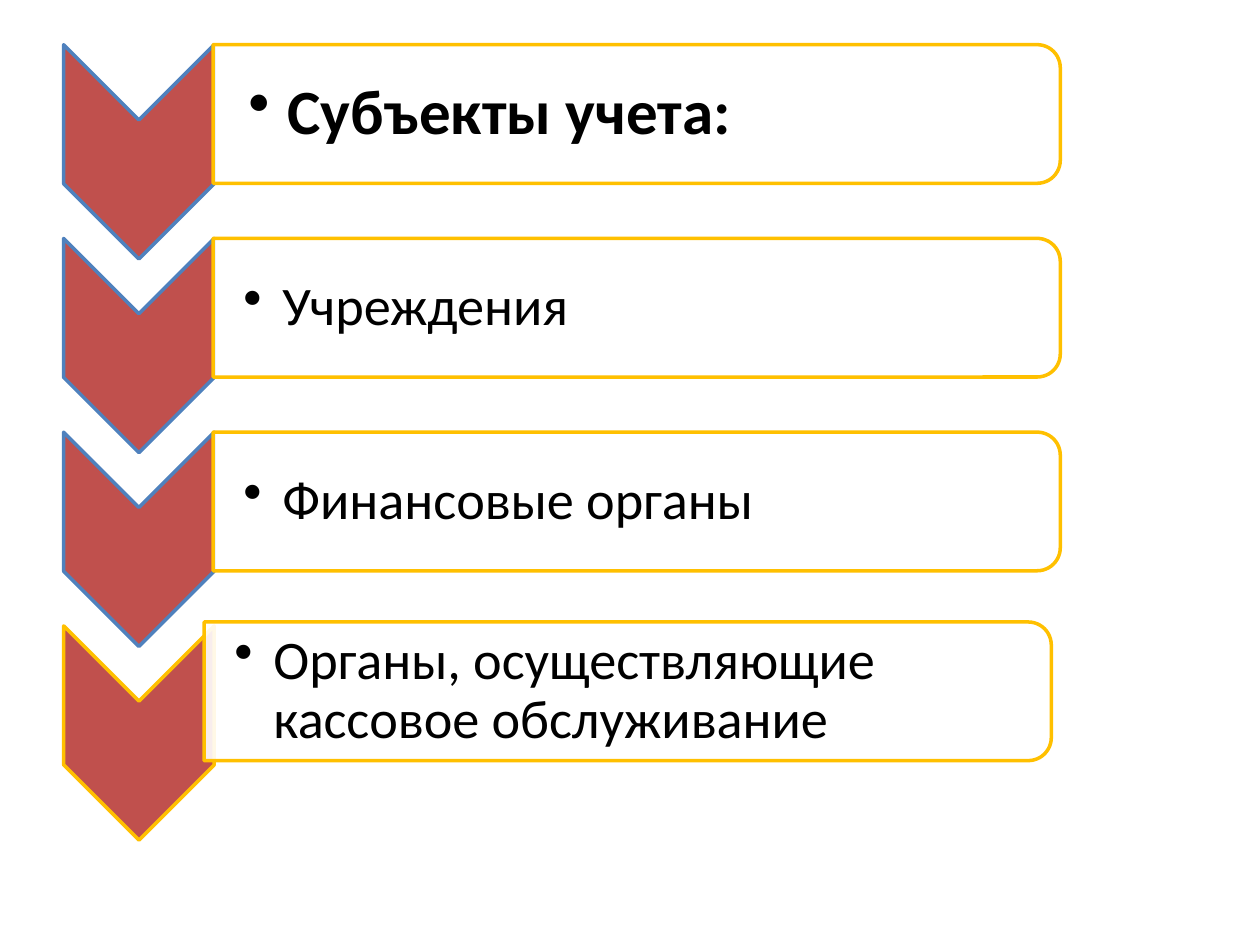
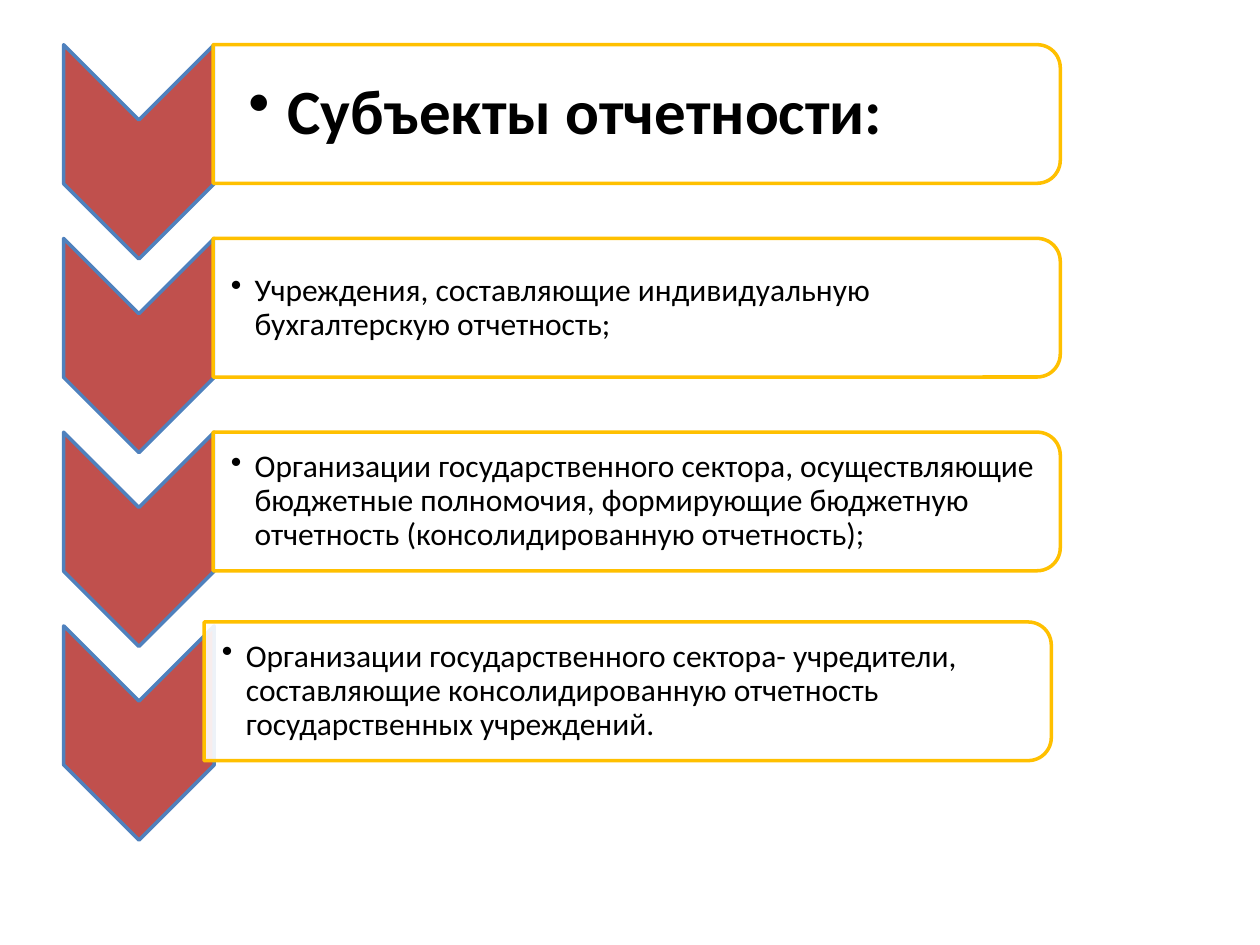
from dataclasses import dataclass

from lxml.etree import SubElement
from pptx import Presentation
from pptx.dml.color import RGBColor
from pptx.enum.shapes import MSO_SHAPE
from pptx.enum.text import MSO_ANCHOR
from pptx.oxml.ns import qn
from pptx.util import Inches, Pt


@dataclass(frozen=True)
class Style:
    size: int
    inset: float
    edge: float
    hang: float
    bold: bool = False


@dataclass(frozen=True)
class Theme:
    font: str = "Calibri"
    ink: str = "000000"
    paper: str = "FFFFFF"
    red: str = "C0504D"
    blue: str = "4F81BD"
    gold: str = "FFC000"
    line: float = 2
    cover: int = 90
    head: Style = Style(36, 0.28, 0.03, 0.31, True)
    large: Style = Style(31, 0.24, 0.02, 0.31)
    small: Style = Style(18, 0.14, 0.01, 0.19)


@dataclass(frozen=True)
class Box:
    left: float
    top: float
    width: float
    height: float

    def share(self, left, top, width, height):
        return Box(
            self.left + self.width * left / 100,
            self.top + self.height * top / 100,
            self.width * width / 100,
            self.height * height / 100,
        )

    def turned(self):
        shift = (self.width - self.height) / 2
        return Box(self.left + shift, self.top - shift, self.height, self.width)

    def inches(self):
        return [Inches(side) for side in (self.left, self.top, self.width, self.height)]


THEME = Theme()
PAGE = Box(0, 0, 10, 7.5)
ROWS = 4

SLIDES = [
    (
        THEME.large,
        THEME.gold,
        [
            "Субъекты учета:",
            "Учреждения",
            "Финансовые органы",
            "Органы, осуществляющие кассовое обслуживание",
        ],
    ),
    (
        THEME.small,
        THEME.blue,
        [
            "Субъекты отчетности:",
            "Учреждения, составляющие индивидуальную бухгалтерскую отчетность;",
            "Организации государственного сектора, осуществляющие бюджетные полномочия, "
            "формирующие бюджетную отчетность (консолидированную отчетность);",
            "Организации государственного сектора- учредители, составляющие "
            "консолидированную отчетность государственных учреждений.",
        ],
    ),
]


def add_turned(shapes, kind, box, fill, line):
    shape = shapes.add_shape(kind, *box.turned().inches())
    shape.rotation = 90
    shape.shadow.inherit = False
    shape.fill.solid()
    shape.fill.fore_color.rgb = RGBColor.from_string(fill)
    shape.line.color.rgb = RGBColor.from_string(line)
    shape.line.width = Pt(THEME.line)
    return shape


def add_card(shapes, box):
    card = add_turned(
        shapes, MSO_SHAPE.ROUND_2_SAME_RECTANGLE, box, THEME.paper, THEME.gold
    )
    tint = card.element.spPr.find(qn("a:solidFill"))[0]
    SubElement(tint, qn("a:alpha"), val=str(THEME.cover * 1000))


def add_point(shapes, box, text, style):
    frame = shapes.add_textbox(*box.inches()).text_frame
    frame.word_wrap = True
    frame.vertical_anchor = MSO_ANCHOR.MIDDLE
    frame.margin_left = Inches(style.inset)
    frame.margin_top = frame.margin_right = frame.margin_bottom = Inches(style.edge)
    point = frame.paragraphs[0]
    point.level = 1
    point.line_spacing = 0.9
    props = point._p.get_or_add_pPr()
    props.set("marL", str(Inches(style.hang)))
    props.set("indent", str(-Inches(style.hang)))
    after = SubElement(props, qn("a:spcAft"))
    SubElement(after, qn("a:spcPct"), val="15000")
    SubElement(props, qn("a:buChar"), char="•")
    run = point.add_run()
    run.text = text
    run.font.name = THEME.font
    run.font.size = Pt(style.size)
    run.font.bold = style.bold
    run.font.color.rgb = RGBColor.from_string(THEME.ink)


def add_row(shapes, box, text, style, line, shift):
    arrow = box.share(0, 0, 15.1, 110.6)
    card = box.share(15 + shift[0], shift[1], 85, 71.6)
    add_turned(shapes, MSO_SHAPE.CHEVRON, arrow, THEME.red, line)
    add_card(shapes, card)
    add_point(shapes, card.share(0, 5, 99.2, 90), text, style)


def add_list(slide, box, style, last, texts):
    shapes = slide.shapes.add_group_shape().shapes
    for row, text in enumerate(texts):
        final = row == ROWS - 1
        add_row(
            shapes,
            box.share(0, row * 100 / ROWS, 100, 100 / ROWS),
            text,
            style if row else THEME.head,
            last if final else THEME.blue,
            (-0.9, -2) if final else (0, 0),
        )


def main():
    deck = Presentation()
    deck.slide_width = Inches(PAGE.width)
    deck.slide_height = Inches(PAGE.height)
    for style, last, texts in SLIDES:
        slide = deck.slides.add_slide(deck.slide_layouts[6])
        add_list(slide, PAGE.share(5.05, 4.73, 79.1, 82), style, last, texts)
    deck.save("out.pptx")


if __name__ == "__main__":
    main()
